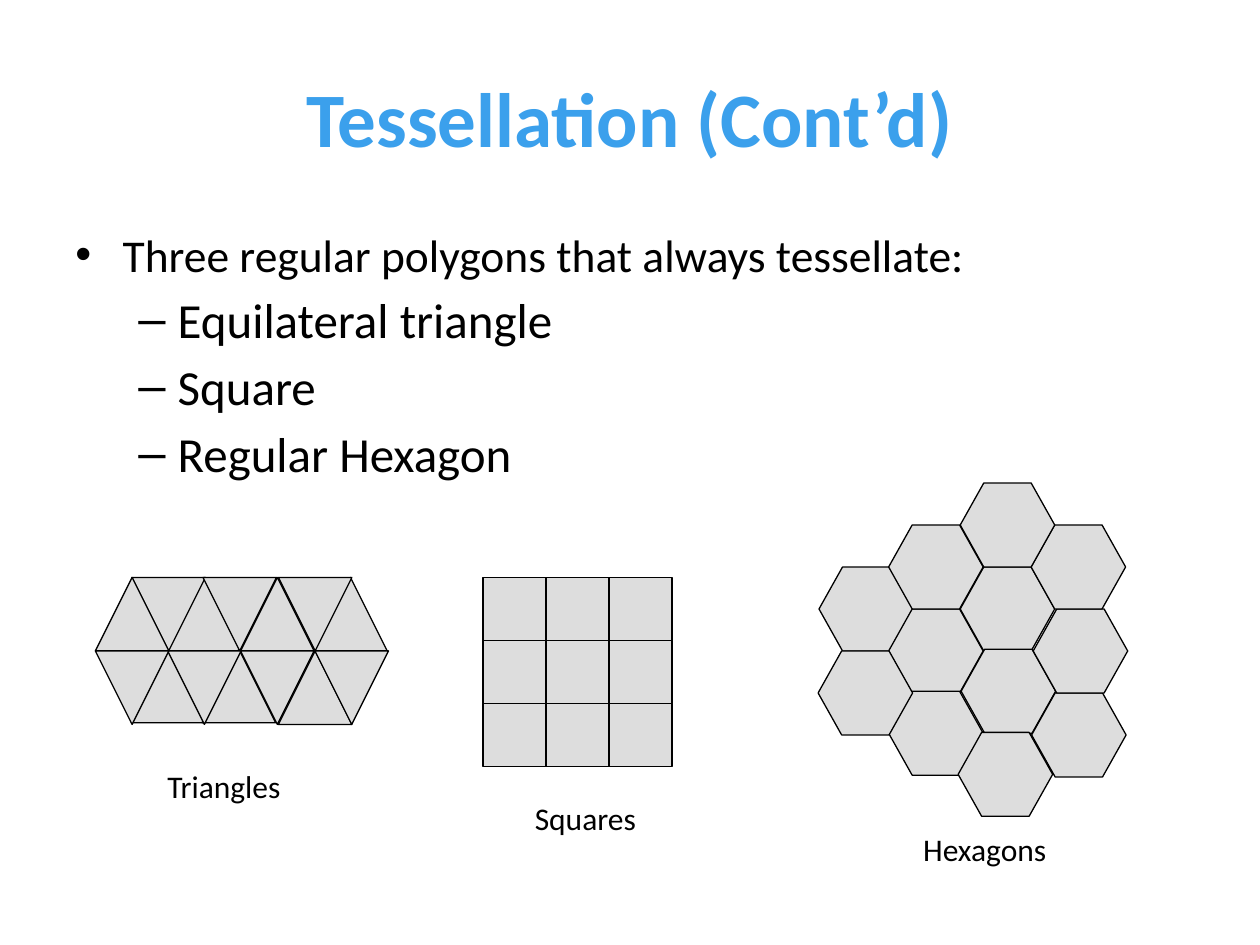
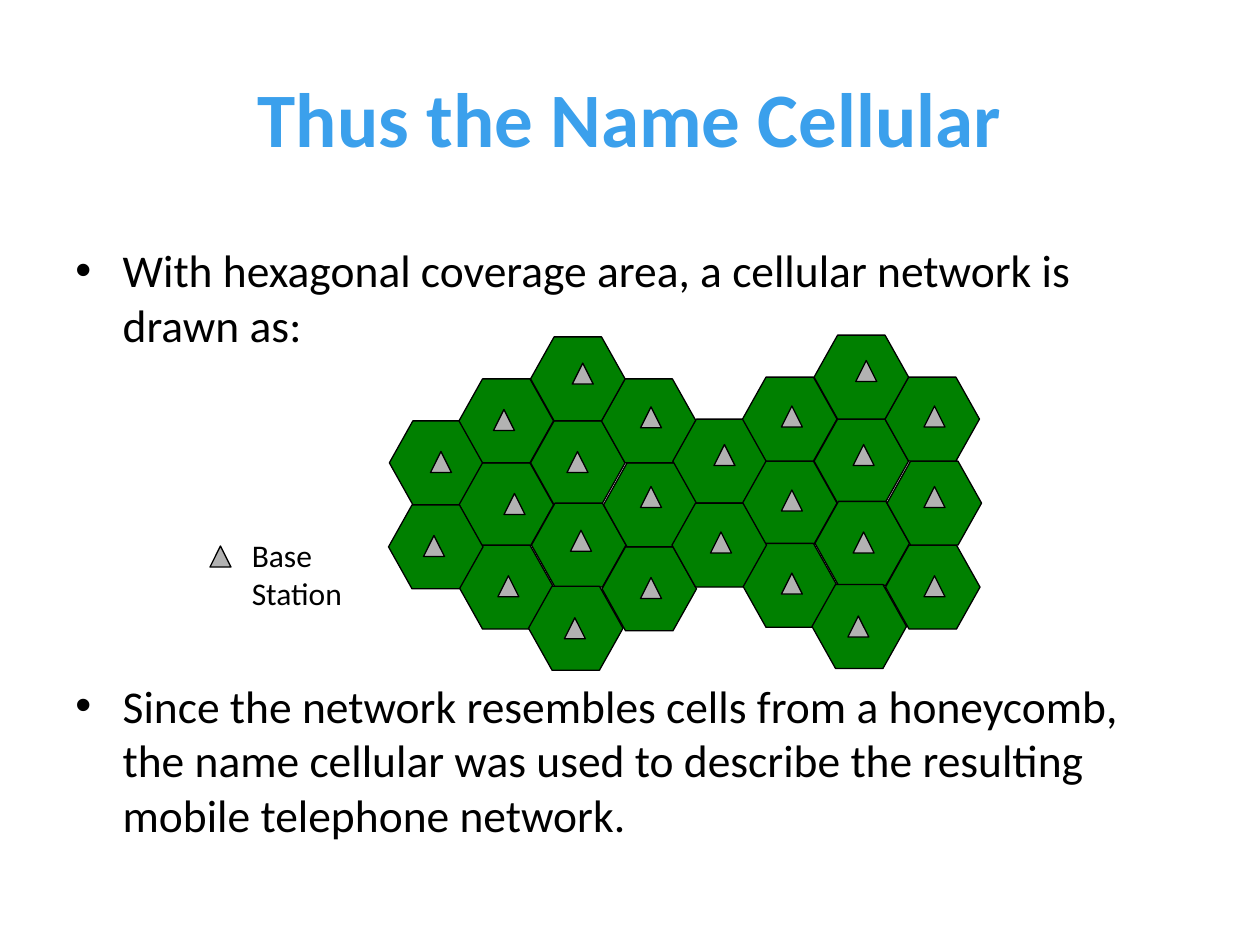
from dataclasses import dataclass

from lxml.etree import SubElement
from pptx import Presentation
from pptx.dml.color import RGBColor
from pptx.enum.shapes import MSO_SHAPE as Kind
from pptx.enum.text import MSO_ANCHOR as Anchor, PP_ALIGN as Align
from pptx.oxml.ns import qn
from pptx.util import Pt

FONT = "Calibri"
COLORS = {
    "title": "3BA0EC",
    "text": "000000",
    "line": "000000",
    "tile": "DDDDDD",
    "cell": "008000",
    "mast": "B2B2B2",
}


@dataclass
class Box:
    left: float
    top: float
    width: float
    height: float


@dataclass
class Tile:
    kind: Kind
    width: float
    height: float
    fill: str


@dataclass
class Row:
    lefts: list[float]
    top: float
    flip: bool


@dataclass
class Item:
    text: str
    size: float = 26
    gap: float = 0
    level: int = 0


# Bullet mark, left margin and hanging indent for each level
LEVELS = [("•", 27, -27), ("–", 58.5, -22.5)]

TRI = Tile(Kind.ISOSCELES_TRIANGLE, 42, 42, "tile")
SQUARE = Tile(Kind.RECTANGLE, 36, 36, "tile")
HEX = Tile(Kind.HEXAGON, 54, 48, "tile")
CELL = Tile(Kind.HEXAGON, 54, 48, "cell")
MAST = Tile(Kind.ISOSCELES_TRIANGLE, 12, 12, "mast")

# Offsets of the twelve hexagons in one cluster, back to front
CLUSTER = [
    (0, 0), (39.8, 24), (39.8, -24), (80.7, 0), (81.2, 47), (39.8, 71),
    (-0.5, 48), (79.5, 94.5), (121.5, 72), (122.4, 24), (121.2, -24),
    (80.7, -48),
]

TRI_ROWS = [
    Row([95.8, 137.5, 179.3], 330, False),
    Row([75, 115.5], 371, False),
    Row([159.1], 372, False),
    Row([75.4, 116, 159.1], 330, True),
    Row([95.8, 137.5, 180], 372, True),
    Row([54.5], 330, False),
    Row([54.5], 372, True),
]

# Station tops by left edge; the first column is the legend
MASTS = {
    120: [312], 242: [306], 246: [258], 282: [234], 288: [282],
    284.5: [329], 322.5: [353], 326: [303], 324: [258], 327: [207.5],
    366: [232.5, 278, 330], 406: [304], 408: [254],
    446.5: [232, 280, 327.5], 484.5: [352], 487.5: [304, 254],
    489: [206], 528: [232, 278, 329],
}


def color(name: str) -> RGBColor:
    return RGBColor.from_string(COLORS[name])


def style(para, size: float, tint: str = "text", bold: bool = False) -> None:
    font = para.font
    font.name, font.size, font.bold = FONT, Pt(size), bold
    font.color.rgb = color(tint)


def frame(slide, box: Box, wrap: bool = True):
    text = slide.shapes.add_textbox(
        Pt(box.left), Pt(box.top), Pt(box.width), Pt(box.height)).text_frame
    text.word_wrap = wrap
    return text


def title(slide, words: str) -> None:
    text = frame(slide, Box(36, 21.6, 648, 90))
    text.vertical_anchor = Anchor.MIDDLE
    para = text.paragraphs[0]
    para.text, para.alignment = words, Align.CENTER
    style(para, 44, "title", True)


def body(slide, box: Box, items: list[Item]) -> None:
    text = frame(slide, box)
    for i, item in enumerate(items):
        para = text.add_paragraph() if i else text.paragraphs[0]
        para.text, para.level = item.text, item.level
        if item.gap:
            para.space_before = Pt(item.gap)
        mark, left, hang = LEVELS[item.level]
        props = para._p.get_or_add_pPr()
        props.set("marL", str(Pt(left)))
        props.set("indent", str(Pt(hang)))
        SubElement(props, qn("a:buFont")).set("typeface", "Arial")
        SubElement(props, qn("a:buChar")).set("char", mark)
        style(para, item.size)


def label(slide, box: Box, lines: list[str]) -> None:
    text = frame(slide, box, False)
    for i, line in enumerate(lines):
        para = text.add_paragraph() if i else text.paragraphs[0]
        para.text = line
        style(para, 18)


def draw(slide, tile: Tile, left: float, top: float,
         flip: bool = False) -> None:
    shape = slide.shapes.add_shape(
        tile.kind, Pt(left), Pt(top), Pt(tile.width), Pt(tile.height))
    shape.shadow.inherit = False
    shape.fill.solid()
    shape.fill.fore_color.rgb = color(tile.fill)
    shape.line.color.rgb = color("line")
    shape.line.width = Pt(0.75)
    if tile.kind == Kind.HEXAGON:
        shape.adjustments[0] = 0.28
    if flip:
        shape._element.spPr.get_or_add_xfrm().set("flipV", "1")


def cluster(slide, tile: Tile, left: float, top: float) -> None:
    for dx, dy in CLUSTER:
        draw(slide, tile, left + dx, top + dy)


def shapes_page(slide) -> None:
    title(slide, "Tessellation (Cont’d)")
    body(slide, Box(36, 126, 648, 347), [
        Item("Three regular polygons that always tessellate:"),
        Item("Equilateral triangle", 28, 4.7, 1),
        Item("Square", 28, 4.7, 1),
        Item("Regular Hexagon", 28, 4.7, 1),
    ])
    # The three tilings
    for row in TRI_ROWS:
        for left in row.lefts:
            draw(slide, TRI, left, row.top, row.flip)
    for i in range(9):
        draw(slide, SQUARE, 276 + i % 3 * SQUARE.width,
             330 + i // 3 * SQUARE.height)
    cluster(slide, HEX, 468, 324)
    # Captions
    label(slide, Box(88.5, 435, 81.5, 29), ["Triangles"])
    label(slide, Box(298.5, 453, 73.5, 29), ["Squares"])
    label(slide, Box(520.5, 471, 86.5, 29), ["Hexagons"])


def network_page(slide) -> None:
    title(slide, "Thus the Name Cellular")
    body(slide, Box(36, 135, 648, 381), [
        Item("With hexagonal coverage area, a cellular network is drawn as:"),
        Item("Since the network resembles cells from a honeycomb, the name "
             "cellular was used to describe the resulting mobile telephone "
             "network.", gap=186.3),
    ])
    # Two clusters of cells, then their stations
    cluster(slide, CELL, 222.5, 240.5)
    cluster(slide, CELL, 384.5, 239.5)
    for left, tops in MASTS.items():
        for top in tops:
            draw(slide, MAST, left, top)
    label(slide, Box(136.8, 303, 67, 51), ["Base", "Station"])


def main() -> None:
    deck = Presentation()
    deck.slide_width, deck.slide_height = Pt(720), Pt(540)
    for fill_page in (shapes_page, network_page):
        fill_page(deck.slides.add_slide(deck.slide_layouts[6]))
    deck.save("out.pptx")


if __name__ == "__main__":
    main()
